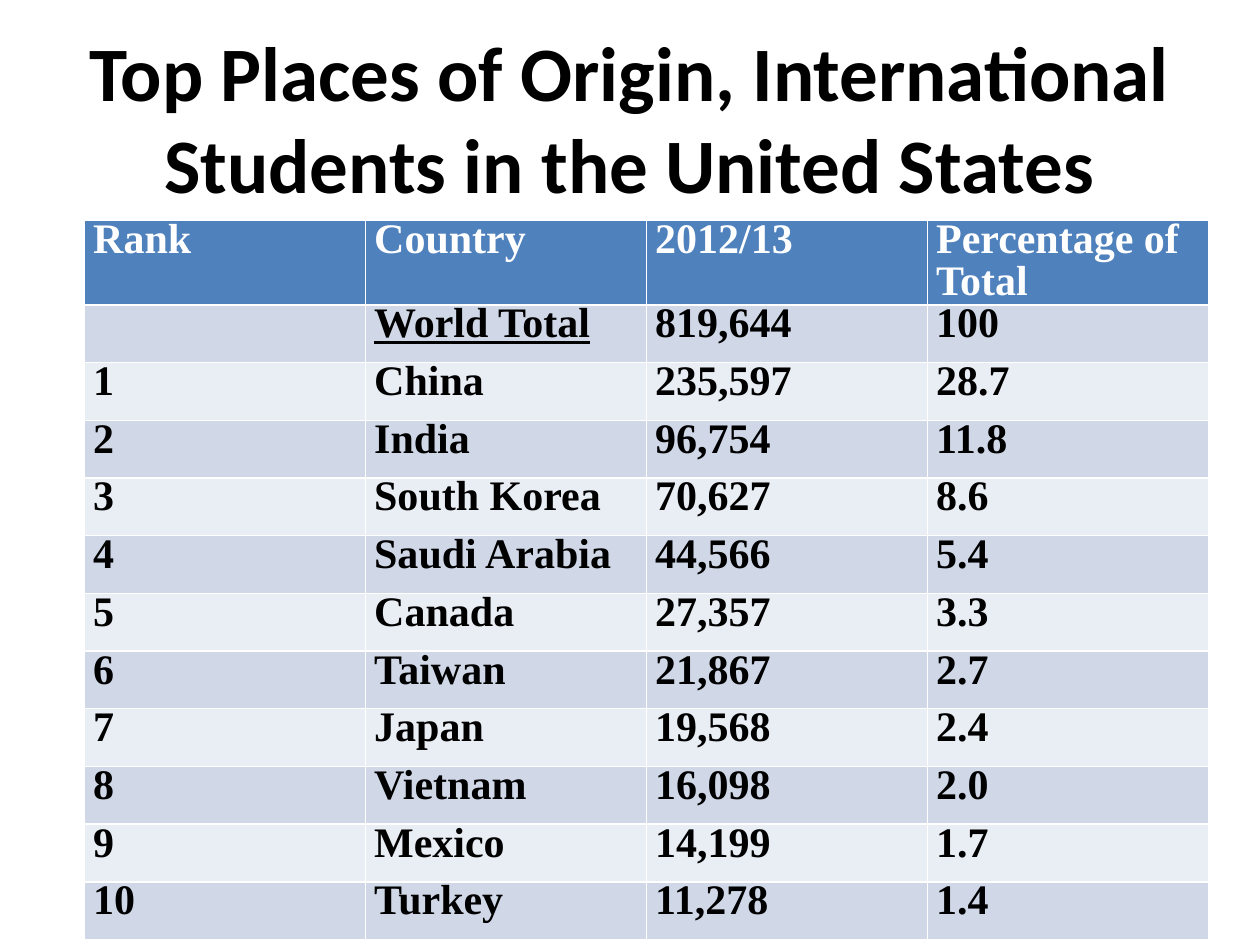
from lxml import etree
from pptx import Presentation
from pptx.dml.color import RGBColor
from pptx.enum.text import MSO_ANCHOR, PP_ALIGN
from pptx.oxml.ns import qn
from pptx.util import Inches, Pt

MIDDLE = MSO_ANCHOR.MIDDLE
CENTER = PP_ALIGN.CENTER
BLACK, WHITE = "000000", "FFFFFF"
HEADER_FILL = "4F81BD"
BAND_FILLS = ("D0D8E8", "E9EDF4")
TITLE_FONT = {"name": "Calibri", "size": Pt(44), "bold": True}
CELL_FONT = {"name": "Times New Roman", "size": Pt(24), "bold": True}
CELL_FRAME = {
    "margin_left": Inches(0.07),
    "margin_right": Inches(0.07),
    "margin_top": 0,
    "margin_bottom": 0,
}
TITLE = "Top Places of Origin, International Students in the United States"
WORLD_TOTAL = "World Total"
HEADINGS = ("Rank", "Country", "2012/13", "Percentage of Total")
COUNTRIES = (
    ("China", "235,597", "28.7"),
    ("India", "96,754", "11.8"),
    ("South Korea", "70,627", "8.6"),
    ("Saudi Arabia", "44,566", "5.4"),
    ("Canada", "27,357", "3.3"),
    ("Taiwan", "21,867", "2.7"),
    ("Japan", "19,568", "2.4"),
    ("Vietnam", "16,098", "2.0"),
    ("Mexico", "14,199", "1.7"),
    ("Turkey", "11,278", "1.4"),
)


def color(value):
    return RGBColor.from_string(value)


def apply_format(target, values):
    for name, value in values.items():
        setattr(target, name, value)


def add_title(slide, left, top, width, height):
    shape = slide.shapes.add_textbox(left, top, width, height)
    apply_format(shape.text_frame, {"word_wrap": True, "vertical_anchor": MIDDLE})
    paragraph = shape.text_frame.paragraphs[0]
    paragraph.text = TITLE
    paragraph.alignment = CENTER
    apply_format(paragraph.font, TITLE_FONT)
    paragraph.font.color.rgb = color(BLACK)


def add_borders(cell, value, width):
    properties = cell._tc.get_or_add_tcPr()
    for side in ("a:lnL", "a:lnR", "a:lnT", "a:lnB"):
        line = etree.SubElement(properties, qn(side), w=str(int(width)))
        fill = etree.SubElement(line, qn("a:solidFill"))
        etree.SubElement(fill, qn("a:srgbClr"), val=value)


def format_cell(cell, text, fill, text_color):
    apply_format(cell, CELL_FRAME)
    add_borders(cell, WHITE, Pt(1))
    cell.fill.solid()
    cell.fill.fore_color.rgb = color(fill)
    paragraph = cell.text_frame.paragraphs[0]
    paragraph.line_spacing = Pt(24)
    apply_format(paragraph.font, CELL_FONT)
    if text:
        run = paragraph.add_run()
        run.text = text
        apply_format(run.font, CELL_FONT)
        run.font.color.rgb = color(text_color)
        if text == WORLD_TOTAL:
            run.font.underline = True


def add_origins_table(slide, left, top, width, height):
    ranked = [(str(rank), *entry) for rank, entry in enumerate(COUNTRIES, 1)]
    records = [HEADINGS, ("", WORLD_TOTAL, "819,644", "100"), *ranked]
    frame = slide.shapes.add_table(
        len(records), len(HEADINGS), left, top, width, height
    )
    table = frame.table
    header_height = Inches(0.67)
    body_height = (height - header_height) // (len(records) - 1)
    for row_index, record in enumerate(records):
        is_header = row_index == 0
        table.rows[row_index].height = header_height if is_header else body_height
        fill = HEADER_FILL if is_header else BAND_FILLS[(row_index - 1) % 2]
        text_color = WHITE if is_header else BLACK
        for column_index, text in enumerate(record):
            format_cell(table.cell(row_index, column_index), text, fill, text_color)


def main():
    presentation = Presentation()
    presentation.slide_width = Inches(10)
    presentation.slide_height = Inches(7.5)
    slide = presentation.slides.add_slide(presentation.slide_layouts[6])
    add_title(slide, Inches(0.5), Inches(0.3), Inches(9), Inches(1.25))
    add_origins_table(slide, Inches(0.67), Inches(1.75), Inches(8.92), Inches(5.71))
    presentation.save("out.pptx")


if __name__ == "__main__":
    main()
